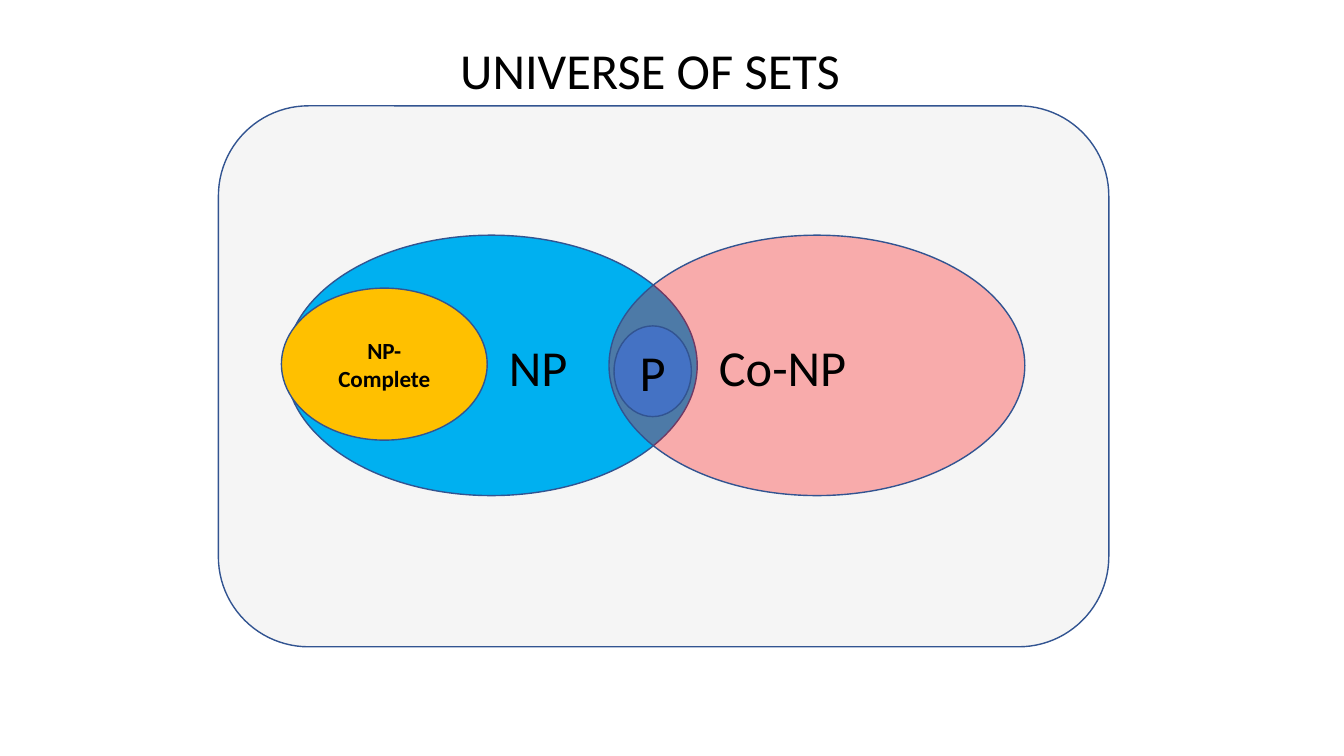
"""Build a slide showing P, NP, Co-NP and NP-Complete in the universe of sets."""
from lxml.etree import SubElement
from pptx import Presentation
from pptx.dml.color import RGBColor
from pptx.enum.shapes import MSO_SHAPE
from pptx.enum.text import MSO_ANCHOR, MSO_AUTO_SIZE, PP_ALIGN
from pptx.oxml.ns import qn
from pptx.util import Inches, Pt

COLUMNS, ROWS = 160, 90
deck = Presentation()
deck.slide_width, deck.slide_height = Inches(13.33), Inches(7.5)
cell_width, cell_height = deck.slide_width / COLUMNS, deck.slide_height / ROWS
slide = deck.slides.add_slide(deck.slide_layouts[6])


def place(column, row, columns, rows):
    return (round(column * cell_width), round(row * cell_height),
            round(columns * cell_width), round(rows * cell_height))


def write(label, text, size=36, align=PP_ALIGN.CENTER, bold=False):
    label.text_frame.word_wrap = True
    paragraph = label.text_frame.paragraphs[0]
    paragraph.text, paragraph.alignment = text, align
    paragraph.font.name, paragraph.font.size = "Calibri", Pt(size)
    paragraph.font.bold = bold
    paragraph.font.color.rgb = RGBColor.from_string("000000")


regions = [
    (MSO_SHAPE.ROUNDED_RECTANGLE, (26, 12.6, 106, 64.4), "F5F5F5", 100, "", 36),
    (MSO_SHAPE.OVAL, (34, 28, 49, 31), "00B0F0", 100, "", 36),
    (MSO_SHAPE.OVAL, (72.5, 28, 49.5, 31), "FF0000", 30, "", 36),
    (MSO_SHAPE.OVAL, (73.1, 38.8, 9.2, 10.8), "4472C4", 100, "P", 36),
    (MSO_SHAPE.OVAL, (33.5, 34.3, 24.5, 18.1), "FFC000", 100, "NP-Complete", 16.5),
]
for outline, area, color, opacity, text, size in regions:
    region = slide.shapes.add_shape(outline, *place(*area))
    region.shadow.inherit = False
    region.fill.solid()
    region.fill.fore_color.rgb = RGBColor.from_string(color)
    region.line.color.rgb = RGBColor.from_string("325491")
    region.line.width = Pt(1)
    if opacity < 100:
        tint = region.fill._xPr.find(qn("a:solidFill"))[0]
        SubElement(tint, qn("a:alpha")).set("val", str(opacity * 1000))
    if text:
        region.text_frame.vertical_anchor = MSO_ANCHOR.MIDDLE
        write(region, text, size, bold=text == "NP-Complete")

captions = [
    ("NP", (59.4, 39.4, 12.8, 8.5), PP_ALIGN.LEFT),
    ("Co-NP", (84.4, 39.4, 23.6, 8.5), PP_ALIGN.LEFT),
    ("UNIVERSE OF SETS", (45.5, 4.1, 63.8, 8.5), PP_ALIGN.CENTER),
]
for text, area, align in captions:
    caption = slide.shapes.add_textbox(*place(*area))
    caption.text_frame.auto_size = MSO_AUTO_SIZE.SHAPE_TO_FIT_TEXT
    write(caption, text, align=align)

deck.save("out.pptx")
